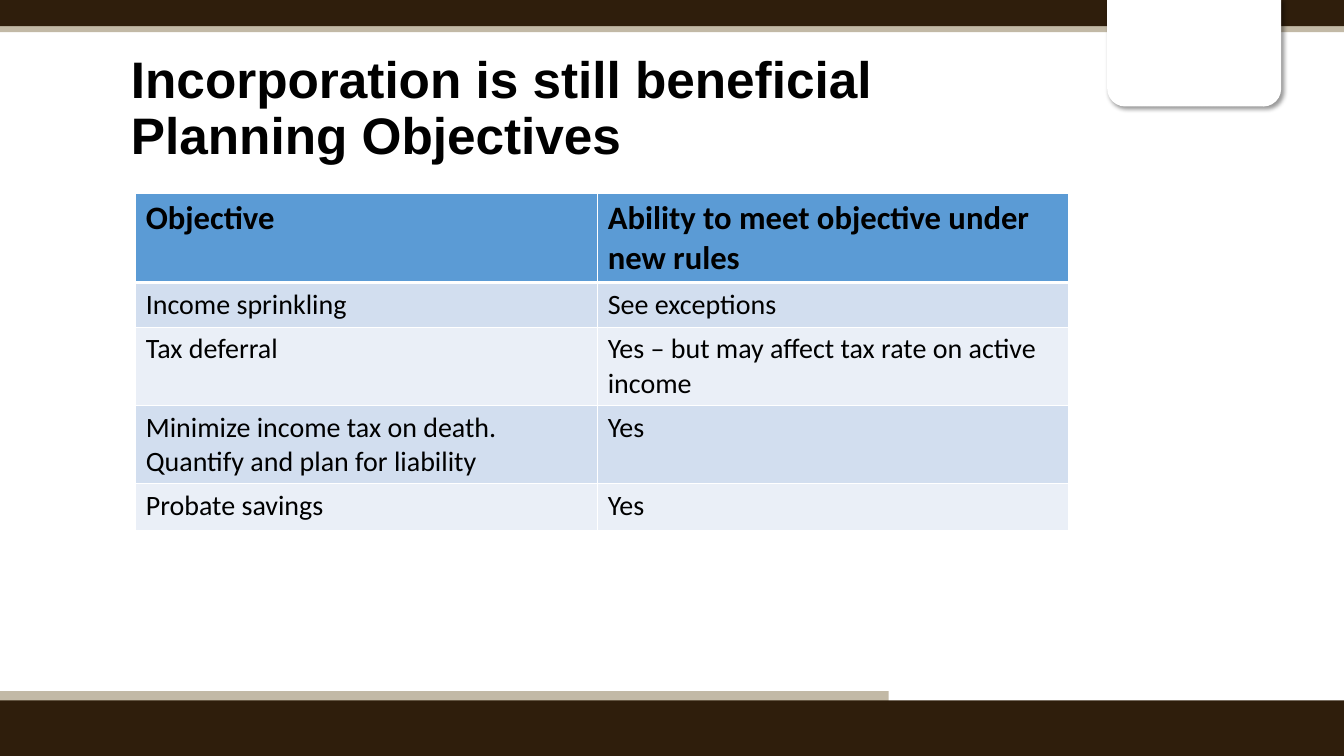
from lxml.etree import SubElement
from pptx import Presentation
from pptx.dml.color import RGBColor
from pptx.enum.shapes import MSO_SHAPE as Preset
from pptx.enum.text import MSO_ANCHOR as Anchor, PP_ALIGN as Align
from pptx.oxml.ns import qn
from pptx.util import Cm, Pt

COLOURS = {
    "tan": "C2B9A6",
    "brown": "2F1E0C",
    "white": "FFFFFF",
    "black": "000000",
    "header": "5B9BD5",
    "odd_row": "D2DEEF",
    "even_row": "EAEFF7",
}
WIDTH, HEIGHT = 40.64, 22.86
OBJECTIVES = [
    ("Objective", "Ability to meet objective under new rules"),
    ("Income sprinkling", "See exceptions"),
    ("Tax deferral", "Yes – but may affect tax rate on active income"),
    ("Minimize income tax on death. Quantify and plan for liability", "Yes"),
    ("Probate savings", "Yes"),
]
COLUMN_SHARES = (5.5, 5.6)
ROW_SHARES = (1.06, 0.53, 0.93, 0.93, 0.55)


def colour(name):
    """Return the named colour."""
    return RGBColor.from_string(COLOURS[name])


def write(frame, text, font="Calibri", size=24, bold=False, ink="black", spacing=None):
    """Put left-aligned, formatted text in a text frame."""
    frame.word_wrap = True
    paragraph = frame.paragraphs[0]
    paragraph.text = text
    paragraph.alignment = Align.LEFT
    paragraph.line_spacing = spacing
    for run in paragraph.runs:
        run.font.name = font
        run.font.size = Pt(size)
        run.font.bold = bold
        run.font.color.rgb = colour(ink)


def add_block(slide, box, fill, preset=Preset.RECTANGLE):
    """Add a plain filled shape."""
    shape = slide.shapes.add_shape(preset, *map(Cm, box))
    shape.shadow.inherit = False
    shape.fill.solid()
    shape.fill.fore_color.rgb = colour(fill)
    shape.line.fill.background()
    return shape


def add_shadow(shape):
    """Give a shape a soft shadow to the lower right."""
    effects = shape._element.spPr.find(qn("a:effectLst"))
    shadow = SubElement(effects, qn("a:outerShdw"), blurRad=str(Pt(4)),
                        dist=str(Pt(3)), dir="2700000", algn="tl", rotWithShape="0")
    ink = SubElement(shadow, qn("a:srgbClr"), val=COLOURS["black"])
    SubElement(ink, qn("a:alpha"), val="40000")


def add_header_band(slide, box):
    """Draw the top band and the white tab hanging from it."""
    left, top, width, height = box
    add_block(slide, (left, top + height - 0.2, width, 0.2), "tan")
    add_block(slide, (left, top, width, height - 0.18), "brown")
    tab = add_block(slide, (left + 33.48, top - 0.03, 5.26, 3.25), "white",
                    Preset.ROUND_2_SAME_RECTANGLE)
    tab.rotation = 180
    add_shadow(tab)


def add_footer_band(slide, box):
    """Draw the bottom band with its shorter accent strip."""
    left, top, width, height = box
    add_block(slide, (left, top, 26.87, 0.43), "tan")
    add_block(slide, (left, top + 0.28, width, height - 0.28), "brown")


def place_title(slide, box):
    """Move the title placeholder into its box and fill it."""
    title = slide.shapes.title
    title.left, title.top, title.width, title.height = map(Cm, box)
    frame = title.text_frame
    frame.vertical_anchor = Anchor.MIDDLE
    frame.margin_left = frame.margin_right = Cm(0.28)
    write(frame, "Incorporation is still beneficial\vPlanning Objectives",
          font="Arial", size=44, bold=True, spacing=0.9)


def set_border(cell, side, points):
    """Draw one white border of a table cell."""
    line = SubElement(cell._tc.get_or_add_tcPr(), qn(f"a:ln{side}"), w=str(Pt(points)))
    fill = SubElement(line, qn("a:solidFill"))
    SubElement(fill, qn("a:srgbClr"), val=COLOURS["white"])


def format_cell(cell, text, row):
    """Fill and format one cell by its row."""
    header = row == 0
    cell.margin_left = cell.margin_right = Cm(0.3)
    cell.margin_top = cell.margin_bottom = Cm(0.15)
    for side, points in (("L", 1), ("R", 1), ("T", 3 if row == 1 else 1),
                         ("B", 3 if header else 1)):
        set_border(cell, side, points)
    cell.fill.solid()
    fill = "header" if header else "odd_row" if row % 2 else "even_row"
    cell.fill.fore_color.rgb = colour(fill)
    write(cell.text_frame, text, size=28 if header else 24, bold=header)


def add_objectives(slide, box):
    """Add the table of planning objectives."""
    width, height = box[2:]
    table = slide.shapes.add_table(len(OBJECTIVES), len(COLUMN_SHARES),
                                   *map(Cm, box)).table
    for column, share in zip(table.columns, COLUMN_SHARES):
        column.width = Cm(width * share / sum(COLUMN_SHARES))
    for row, share in zip(table.rows, ROW_SHARES):
        row.height = Cm(height * share / sum(ROW_SHARES))
    for row, texts in enumerate(OBJECTIVES):
        for column, text in enumerate(texts):
            format_cell(table.cell(row, column), text, row)


def main():
    """Build and save the slide."""
    presentation = Presentation()
    presentation.slide_width, presentation.slide_height = Cm(WIDTH), Cm(HEIGHT)
    slide = presentation.slides.add_slide(presentation.slide_layouts[5])
    add_header_band(slide, (0, 0, WIDTH, 0.97))
    add_footer_band(slide, (0, 20.9, WIDTH, HEIGHT - 20.9))
    place_title(slide, (3.68, 1.42, 25.15, 3.81))
    add_objectives(slide, (4.11, 5.84, 28.19, 10.16))
    presentation.save("out.pptx")


if __name__ == "__main__":
    main()
